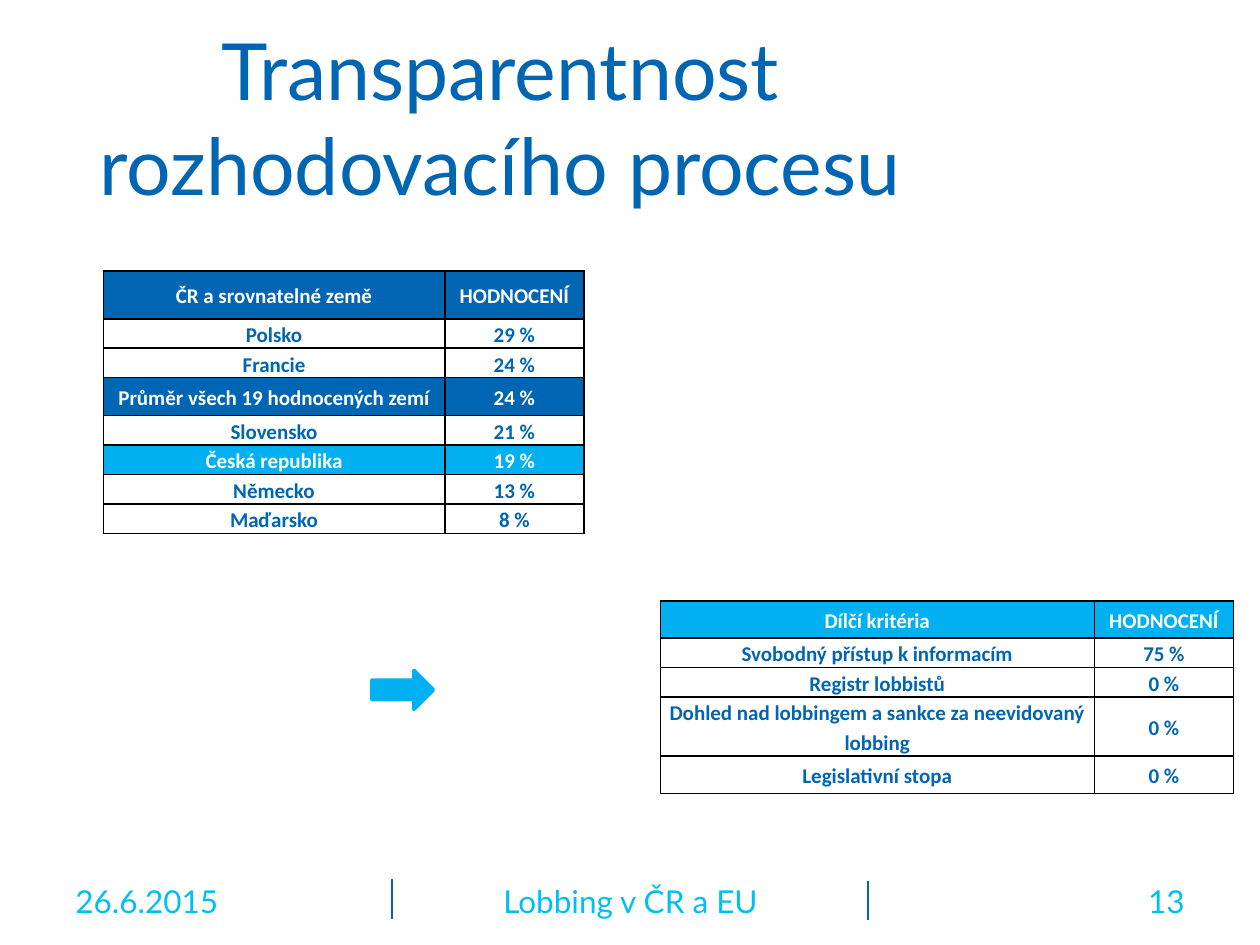
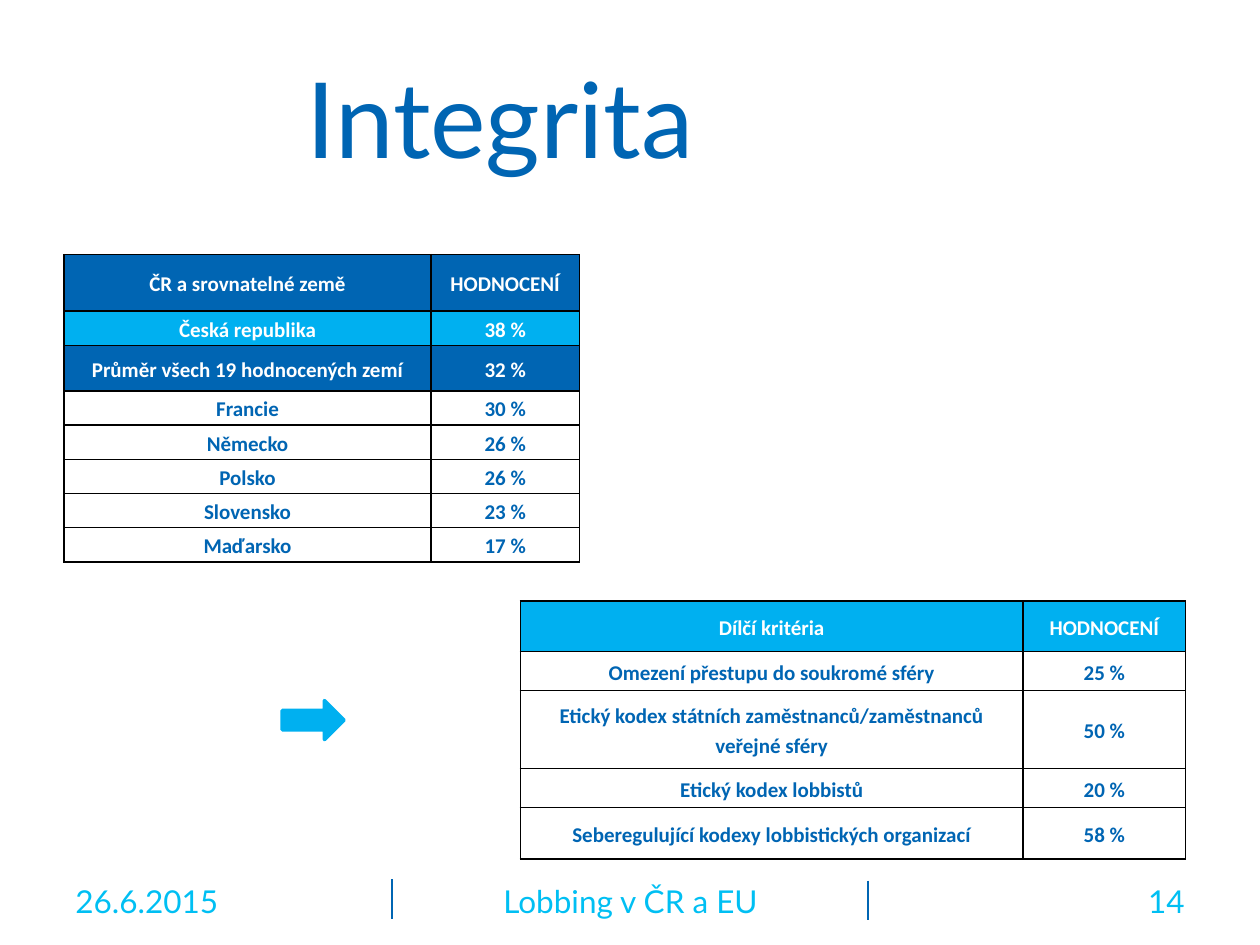
import dataclasses
import enum
import typing

import lxml.etree
import pptx
import pptx.dml.color
import pptx.enum.shapes
import pptx.enum.text
import pptx.oxml.ns
import pptx.util

ALIGN = pptx.enum.text.PP_ALIGN
MIDDLE = pptx.enum.text.MSO_ANCHOR.MIDDLE
SHAPES = pptx.enum.shapes.MSO_SHAPE

WIDTH = pptx.util.Inches(10)
HEIGHT = pptx.util.Inches(7.5)
GRID_COLUMNS = 100
GRID_ROWS = 75


@dataclasses.dataclass(frozen=True)
class Theme:
    blue: str = "0065B3"
    sky: str = "00B0F0"
    footer: str = "00BFF3"
    white: str = "FFFFFF"
    black: str = "000000"
    display_font: str = "Lato"
    table_font: str = "Calibri"
    footer_size: float = 18
    table_size: float = 12
    table_spacing: float = 1.15
    border_width: float = 1
    divider_width: float = 1.5
    arrow_width: float = 2
    cell_inset: float = 0.7


THEME = Theme()


class Tone(enum.Enum):
    PLAIN = ""
    DARK = THEME.blue
    BRIGHT = THEME.sky


class Area(typing.NamedTuple):
    left: float
    top: float
    width: float
    height: float


class Row(typing.NamedTuple):
    label: str
    score: str
    height: float
    tone: Tone = Tone.PLAIN


@dataclasses.dataclass(frozen=True)
class ScoreTable:
    left: float
    top: float
    label_width: float
    score_width: float
    rows: list[Row]


@dataclasses.dataclass(frozen=True)
class Page:
    number: int
    title: str
    title_size: float
    countries: ScoreTable
    criteria: ScoreTable
    arrow: Area


@dataclasses.dataclass(frozen=True)
class Label:
    area: Area
    text: str
    size: float
    color: str
    align: ALIGN


TITLE_AREA = Area(5, 3, 69.4, 12.5)
ARROW_WIDTH, ARROW_HEIGHT = 4.9, 3.1
FOOTER_TOP, FOOTER_HEIGHT = 69.5, 4
DIVIDERS = [Area(31.1, 69.8, 0, 3.1), Area(68.9, 69.9, 0, 3.1)]

COUNTRY_HEADER = "ČR a srovnatelné země"
CRITERIA_HEADER = "Dílčí kritéria"
SCORE_HEADER = "HODNOCENÍ"
AVERAGE = "Průměr všech 19 hodnocených zemí"

PAGES = [
    Page(
        13, "Transparentnost rozhodovacího procesu", 45,
        ScoreTable(8.2, 21.5, 27.1, 11.05, [
            Row(COUNTRY_HEADER, SCORE_HEADER, 3.8, Tone.DARK),
            Row("Polsko", "29 %", 2.34),
            Row("Francie", "24 %", 2.34),
            Row(AVERAGE, "24 %", 3, Tone.DARK),
            Row("Slovensko", "21 %", 2.34),
            Row("Česká republika", "19 %", 2.34, Tone.BRIGHT),
            Row("Německo", "13 %", 2.34),
            Row("Maďarsko", "8 %", 2.34),
        ]),
        ScoreTable(52.4, 47.7, 34.45, 11.05, [
            Row(CRITERIA_HEADER, SCORE_HEADER, 2.95, Tone.BRIGHT),
            Row("Svobodný přístup k informacím", "75 %", 2.34),
            Row("Registr lobbistů", "0 %", 2.34),
            Row("Dohled nad lobbingem a sankce za neevidovaný lobbing", "0 %", 4.67),
            Row("Legislativní stopa", "0 %", 3),
        ]),
        Area(29.5, 53.2, ARROW_WIDTH, ARROW_HEIGHT),
    ),
    Page(
        14, "Integrita", 60,
        ScoreTable(5.1, 20.2, 29.1, 11.8, [
            Row(COUNTRY_HEADER, SCORE_HEADER, 4.5, Tone.DARK),
            Row("Česká republika", "38 %", 2.72, Tone.BRIGHT),
            Row(AVERAGE, "32 %", 3.6, Tone.DARK),
            Row("Francie", "30 %", 2.72),
            Row("Německo", "26 %", 2.72),
            Row("Polsko", "26 %", 2.72),
            Row("Slovensko", "23 %", 2.72),
            Row("Maďarsko", "17 %", 2.72),
        ]),
        ScoreTable(41.3, 47.7, 39.9, 12.9, [
            Row(CRITERIA_HEADER, SCORE_HEADER, 4, Tone.BRIGHT),
            Row("Omezení přestupu do soukromé sféry", "25 %", 3.1),
            Row("Etický kodex státních zaměstnanců/zaměstnanců veřejné sféry", "50 %", 6.2),
            Row("Etický kodex lobbistů", "20 %", 3.1),
            Row("Seberegulující kodexy lobbistických organizací", "58 %", 4.1),
        ]),
        Area(22.4, 55.6, ARROW_WIDTH, ARROW_HEIGHT),
    ),
]


def across(columns: float) -> int:
    return round(WIDTH * columns / GRID_COLUMNS)


def down(rows: float) -> int:
    return round(HEIGHT * rows / GRID_ROWS)


def place(area: Area) -> tuple[int, int, int, int]:
    return across(area.left), down(area.top), across(area.width), down(area.height)


def rgb(color: str) -> pptx.dml.color.RGBColor:
    return pptx.dml.color.RGBColor.from_string(color)


def apply(target: typing.Any, formats: dict[str, typing.Any]) -> None:
    for name, value in formats.items():
        setattr(target, name, value)


def write(para, text: str, color: str, para_format: dict, font_format: dict) -> None:
    apply(para, para_format)
    span = para.add_run()
    span.text = text
    apply(span.font, font_format)
    span.font.color.rgb = rgb(color)


def draw_label(slide, label: Label) -> None:
    box = slide.shapes.add_textbox(*place(label.area))
    apply(box.text_frame, {"word_wrap": True, "vertical_anchor": MIDDLE})
    write(box.text_frame.paragraphs[0], label.text, label.color, {"alignment": label.align},
          {"name": THEME.display_font, "size": pptx.util.Pt(label.size)})


def draw_divider(slide, area: Area) -> None:
    left, top, width, height = place(area)
    divider = slide.shapes.add_connector(
        pptx.enum.shapes.MSO_CONNECTOR.STRAIGHT, left, top, left + width, top + height)
    divider.line.color.rgb = rgb(THEME.blue)
    divider.line.width = pptx.util.Pt(THEME.divider_width)
    lxml.etree.SubElement(divider._element.spPr, pptx.oxml.ns.qn("a:effectLst"))


def draw_borders(cell) -> None:
    properties = cell._tc.get_or_add_tcPr()
    for side in ("lnL", "lnR", "lnT", "lnB"):
        border = lxml.etree.SubElement(properties, pptx.oxml.ns.qn(f"a:{side}"),
                                       w=str(pptx.util.Pt(THEME.border_width)))
        fill = lxml.etree.SubElement(border, pptx.oxml.ns.qn("a:solidFill"))
        lxml.etree.SubElement(fill, pptx.oxml.ns.qn("a:srgbClr"), val=THEME.black)


def draw_cell(cell, text: str, tone: Tone) -> None:
    inset = across(THEME.cell_inset)
    apply(cell, {"margin_left": inset, "margin_right": inset, "margin_top": 0,
                 "margin_bottom": 0, "vertical_anchor": MIDDLE})
    draw_borders(cell)
    if tone is Tone.PLAIN:
        cell.fill.background()
    else:
        cell.fill.solid()
        cell.fill.fore_color.rgb = rgb(tone.value)
    write(cell.text_frame.paragraphs[0], text,
          THEME.blue if tone is Tone.PLAIN else THEME.white,
          {"alignment": ALIGN.CENTER, "line_spacing": THEME.table_spacing},
          {"name": THEME.table_font, "size": pptx.util.Pt(THEME.table_size), "bold": True})


def draw_table(slide, scores: ScoreTable) -> None:
    widths = (scores.label_width, scores.score_width)
    area = Area(scores.left, scores.top, sum(widths), sum(row.height for row in scores.rows))
    table = slide.shapes.add_table(len(scores.rows), len(widths), *place(area)).table
    apply(table, {"first_row": False, "horz_banding": False})
    for column, width in zip(table.columns, widths):
        column.width = across(width)
    for index, row in enumerate(scores.rows):
        table.rows[index].height = down(row.height)
        for column, text in enumerate((row.label, row.score)):
            draw_cell(table.cell(index, column), text, row.tone)


def draw_arrow(slide, area: Area) -> None:
    arrow = slide.shapes.add_shape(SHAPES.RIGHT_ARROW, *place(area))
    arrow.shadow.inherit = False
    arrow.fill.solid()
    arrow.fill.fore_color.rgb = rgb(THEME.sky)
    arrow.line.color.rgb = rgb(THEME.sky)
    arrow.line.width = pptx.util.Pt(THEME.arrow_width)


def draw_footer(slide, number: int) -> None:
    for divider in DIVIDERS:
        draw_divider(slide, divider)
    for left, width, text, align in (
        (5, 23.3, "26.6.2015", ALIGN.LEFT),
        (34.2, 31.7, "Lobbing v ČR a EU", ALIGN.CENTER),
        (71.7, 23.3, str(number), ALIGN.RIGHT),
    ):
        draw_label(slide, Label(Area(left, FOOTER_TOP, width, FOOTER_HEIGHT), text,
                                THEME.footer_size, THEME.footer, align))


def draw_page(deck, page: Page) -> None:
    slide = deck.slides.add_slide(deck.slide_layouts[6])
    draw_footer(slide, page.number)
    draw_label(slide, Label(TITLE_AREA, page.title, page.title_size, THEME.blue, ALIGN.CENTER))
    draw_table(slide, page.countries)
    draw_table(slide, page.criteria)
    draw_arrow(slide, page.arrow)


def main() -> None:
    deck = pptx.Presentation()
    apply(deck, {"slide_width": WIDTH, "slide_height": HEIGHT})
    for page in PAGES:
        draw_page(deck, page)
    deck.save("out.pptx")


if __name__ == "__main__":
    main()
